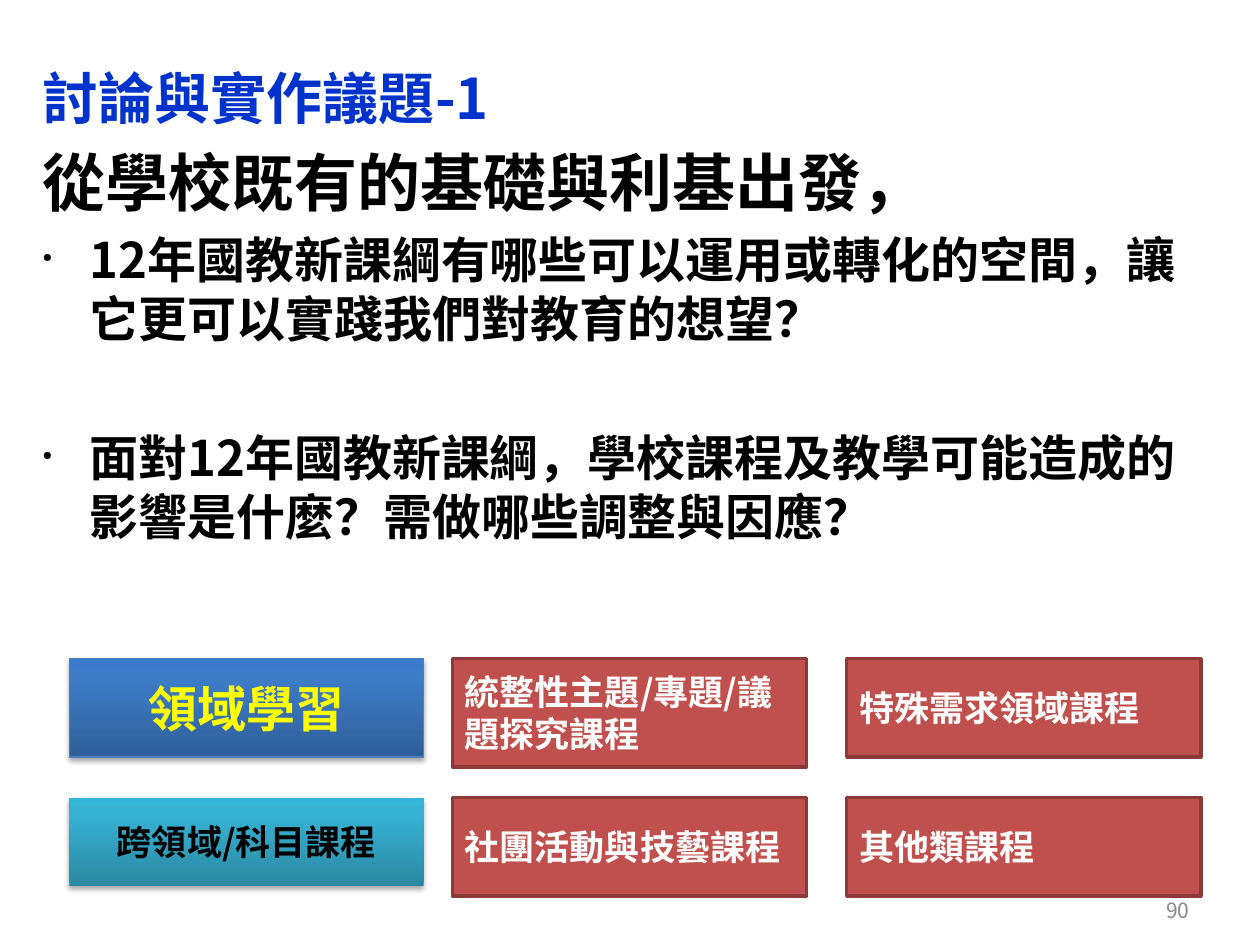
from copy import deepcopy

from lxml import etree
from pptx import Presentation
from pptx.dml.color import RGBColor
from pptx.enum.shapes import MSO_SHAPE
from pptx.enum.text import MSO_ANCHOR, PP_ALIGN
from pptx.oxml.ns import qn
from pptx.util import Cm, Pt

RECTANGLE = MSO_SHAPE.RECTANGLE
MIDDLE, TOP = MSO_ANCHOR.MIDDLE, MSO_ANCHOR.TOP
LEFT, CENTER = PP_ALIGN.LEFT, PP_ALIGN.CENTER
RIGHT, JUSTIFY = PP_ALIGN.RIGHT, PP_ALIGN.JUSTIFY

FONT = "Noto Sans CJK SC"
COLORS = {
    "title": "0033CC",
    "black": "000000",
    "white": "FFFFFF",
    "yellow": "FFFF00",
    "number": "898989",
    "red": "C0504D",
    "red_line": "8C3A38",
    "blue_line": "4B7EBC",
}
BLUE_GRADIENT = ("2F5F99", "3D7CC7", "3A7CCB")
TEAL_GRADIENT = ("2A88A2", "37B1D2", "34B4D6")
GRADIENT_POSITIONS = (0, 0.8, 1)

COLUMNS = (1.4, 9.12, 17.07)
ROWS = (13.28, 16.08)
CARD_WIDTH, CARD_HEIGHT = 7.14, 1.98
INDENT = 0.95


def add_element(parent, tag, **attributes):
    """Append a DrawingML element with the given attributes."""
    values = {name: str(value) for name, value in attributes.items()}
    return etree.SubElement(parent, qn(tag), values)


class SlideBuilder:
    """Hold the style and the current slide."""

    def __init__(self, slide):
        self.slide = slide

    def style_runs(self, paragraph, size, color, bold=True):
        """Format every run of a paragraph."""
        for run in paragraph.runs:
            run.font.size = Pt(size)
            run.font.bold = bold
            run.font.color.rgb = RGBColor.from_string(COLORS[color])
            run.font.name = FONT
            add_element(run.font._element, "a:ea", typeface=FONT)

    def text_box(self, left, top, width, height, anchor):
        """Add a wrapping text box and return its text frame."""
        shape = self.slide.shapes.add_textbox(Cm(left), Cm(top), Cm(width), Cm(height))
        shape.text_frame.word_wrap = True
        shape.text_frame.vertical_anchor = anchor
        return shape.text_frame

    def card(self, column, row, text, size=20, color="white", align=LEFT, height=CARD_HEIGHT):
        """Add a labelled rectangle on the grid."""
        shape = self.slide.shapes.add_shape(
            RECTANGLE, Cm(COLUMNS[column]), Cm(ROWS[row]), Cm(CARD_WIDTH), Cm(height)
        )
        shape.shadow.inherit = False
        shape.text_frame.word_wrap = True
        shape.text_frame.vertical_anchor = MIDDLE
        shape.text_frame.text = text
        paragraph = shape.text_frame.paragraphs[0]
        paragraph.alignment = align
        self.style_runs(paragraph, size, color)
        return shape

    def red_card(self, column, row, text, height=CARD_HEIGHT):
        """Add a flat red card with a dark outline."""
        shape = self.card(column, row, text, height=height)
        shape.fill.solid()
        shape.fill.fore_color.rgb = RGBColor.from_string(COLORS["red"])
        self.outline(shape, "red_line", 2)

    def gradient_card(self, row, text, size, color, gradient, height=CARD_HEIGHT):
        """Add a shaded card with a soft shadow in the first column."""
        shape = self.card(0, row, text, size, color, CENTER, height)
        shape.fill.gradient()
        shape.fill.gradient_angle = 90
        stop_list = shape._element.spPr.find(".//" + qn("a:gsLst"))
        stop_list.append(deepcopy(stop_list[-1]))
        for stop, shade, position in zip(shape.fill.gradient_stops, gradient, GRADIENT_POSITIONS):
            stop.color.rgb = RGBColor.from_string(shade)
            stop.position = position
        effects = shape._element.spPr.find(qn("a:effectLst"))
        shadow = add_element(
            effects, "a:outerShdw", blurRad=Pt(3.1), dist=Pt(1.8), dir=5400000, rotWithShape=0
        )
        shade = add_element(shadow, "a:srgbClr", val=COLORS["black"])
        add_element(shade, "a:alpha", val=35000)
        shape.line.fill.background()
        return shape

    def outline(self, shape, color, width):
        """Give a shape a solid outline."""
        shape.line.color.rgb = RGBColor.from_string(COLORS[color])
        shape.line.width = Pt(width)

    def bullet(self, paragraph):
        """Give a paragraph a hanging small round bullet."""
        properties = paragraph._p.get_or_add_pPr()
        properties.set("marL", str(Cm(INDENT)))
        properties.set("indent", str(-Cm(INDENT)))
        color = add_element(properties, "a:buClr")
        add_element(color, "a:srgbClr", val=COLORS["black"])
        add_element(properties, "a:buSzPct", val=25000)
        add_element(properties, "a:buChar", char="●")

    def discussion(self, title, lead, questions):
        """Add the title, the lead line and the bulleted questions."""
        frame = self.text_box(0.61, 0.48, 23.6, 12.8, TOP)
        frame.text = title
        heading = frame.paragraphs[0]
        heading.line_spacing = 1.5
        self.style_runs(heading, 32, "title")
        opening = frame.add_paragraph()
        opening.text = lead
        opening.alignment = JUSTIFY
        opening.space_before = Pt(7.2)
        self.style_runs(opening, 36, "black")
        for question, gap in questions:
            paragraph = frame.add_paragraph()
            paragraph.text = question
            self.bullet(paragraph)
            paragraph.space_before = Pt(gap)
            self.style_runs(paragraph, 28, "black")

    def slide_number(self, number):
        """Add the page number at the lower right."""
        frame = self.text_box(18.31, 17.83, 5.92, 1.02, MIDDLE)
        frame.text = number
        frame.paragraphs[0].alignment = RIGHT
        self.style_runs(frame.paragraphs[0], 12, "number", bold=False)


def main():
    """Build and save the discussion slide."""
    presentation = Presentation()
    presentation.slide_width, presentation.slide_height = Cm(25.4), Cm(19.05)
    builder = SlideBuilder(presentation.slides.add_slide(presentation.slide_layouts[6]))
    builder.slide_number("90")
    field_card = builder.gradient_card(0, "領域學習", 28, "yellow", BLUE_GRADIENT)
    builder.outline(field_card, "blue_line", 0.75)
    builder.gradient_card(1, "跨領域/科目課程", 20, "black", TEAL_GRADIENT, height=1.78)
    builder.red_card(1, 0, "統整性主題/專題/議題探究課程", height=2.18)
    builder.red_card(1, 1, "社團活動與技藝課程")
    builder.red_card(2, 0, "特殊需求領域課程")
    builder.red_card(2, 1, "其他類課程")
    builder.discussion(
        "討論與實作議題-1",
        "從學校既有的基礎與利基出發，",
        (
            ("12年國教新課綱有哪些可以運用或轉化的空間，讓它更可以實踐我們對教育的想望？", 6),
            ("面對12年國教新課綱，學校課程及教學可能造成的影響是什麼？需做哪些調整與因應？", 46),
        ),
    )
    presentation.save("out.pptx")


if __name__ == "__main__":
    main()
